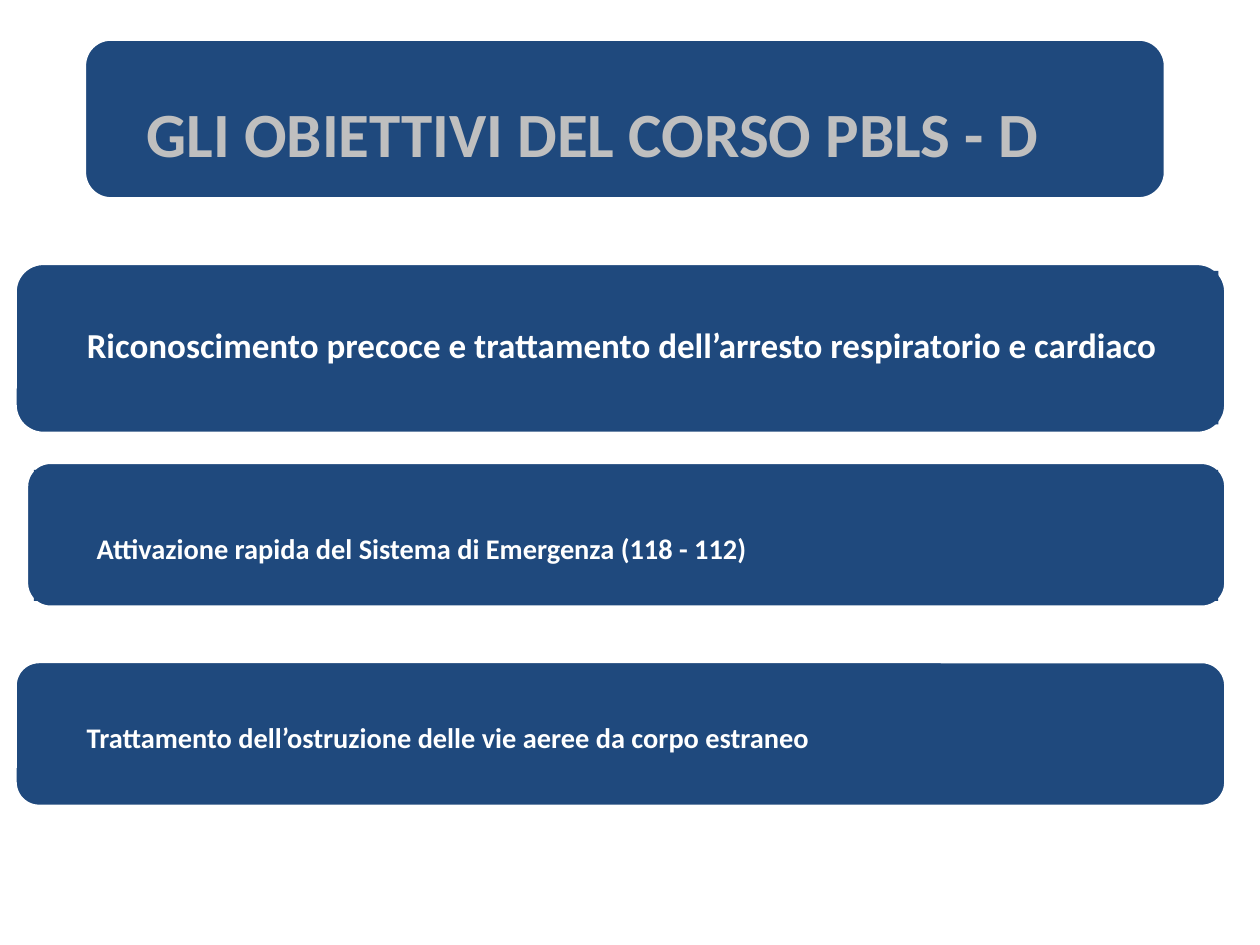
from pptx import Presentation
from pptx.dml.color import RGBColor
from pptx.enum.shapes import MSO_SHAPE
from pptx.enum.text import MSO_ANCHOR, MSO_AUTO_SIZE, PP_ALIGN
from pptx.util import Pt

COLORS = {"panel": "1F497D", "edge": "FFFFFF", "title": "BFBFBF", "goal": "FFFFFF"}

# Boxes are (left, top, width, height) in points; inner boxes are
# relative to the left and top of their panel.
TITLE_PANEL = (48.2, 22.3, 617.8, 91.4)
TITLE_BAND = (3.6, 28.8, 610.6, 29.5)
TITLE_TEXT = (-16.6, 28.1, 614.2, 51.1)

# Panel, band, text box, wording, size, raised
GOALS = [
    ((8.6, 150.5, 691.9, 97.2), (11.5, 4.3, 676.1, 87.8), (33.9, 31, 646.6, 31.7),
     "Riconoscimento precoce e trattamento dell’arresto respiratorio e cardiaco",
     20, False),
    ((15.1, 264.2, 685.4, 82.8), (4.3, 4.3, 676.8, 74.9), (33.1, 32.4, 527, 30.2),
     "Attivazione rapida del Sistema di Emergenza (118 - 112)", 28, True),
    ((8.6, 378, 691.9, 82.8), None, (33.9, 26.6, 544.3, 30.2),
     "Trattamento dell’ostruzione delle vie aeree da corpo estraneo", 28, True),
]


def color(name):
    return RGBColor.from_string(COLORS[name])


def within(panel, inner):
    left, top, width, height = inner
    return panel[0] + left, panel[1] + top, width, height


def add_block(shapes, kind, box):
    block = shapes.add_shape(kind, *map(Pt, box))
    block.shadow.inherit = False
    block.fill.solid()
    block.fill.fore_color.rgb = color("panel")
    return block


def add_panel(slide, box, band_box):
    """Rounded panel, grouped with the plain band inside it if there is one."""
    shapes = slide.shapes.add_group_shape().shapes if band_box else slide.shapes
    panel = add_block(shapes, MSO_SHAPE.ROUNDED_RECTANGLE, box)
    panel.line.color.rgb = color("edge")
    panel.line.width = Pt(2)
    if band_box:
        band = add_block(shapes, MSO_SHAPE.RECTANGLE, within(box, band_box))
        band.line.fill.background()


def write(frame, wording, size, color_name):
    frame.word_wrap = True
    frame.auto_size = MSO_AUTO_SIZE.SHAPE_TO_FIT_TEXT
    frame.vertical_anchor = MSO_ANCHOR.TOP
    paragraph = frame.paragraphs[0]
    paragraph.text = wording
    font = paragraph.font
    font.name, font.size, font.bold = "Calibri", Pt(size), True
    font.color.rgb = color(color_name)
    return paragraph


def add_heading(slide, box):
    add_panel(slide, box, TITLE_BAND)
    title = slide.shapes.title
    title.left, title.top, title.width, title.height = map(Pt, within(box, TITLE_TEXT))
    frame = title.text_frame
    frame.margin_left = frame.margin_right = Pt(3.6)
    frame.margin_top = frame.margin_bottom = Pt(3.6)
    heading = write(frame, "GLI OBIETTIVI DEL CORSO PBLS - D", 36, "title")
    heading.alignment = PP_ALIGN.CENTER
    # Bring the title in front of its panel
    slide.shapes._spTree.append(title._element)


def add_goal(slide, box, band_box, text_box, wording, size, raised):
    add_panel(slide, box, band_box)
    label = slide.shapes.add_textbox(*map(Pt, within(box, text_box)))
    goal = write(label.text_frame, wording, size, "goal")
    if raised:
        goal.runs[0]._r.get_or_add_rPr().set("baseline", "30000")


def main():
    prs = Presentation()
    prs.slide_width, prs.slide_height = Pt(720), Pt(540)
    slide = prs.slides.add_slide(prs.slide_layouts[5])
    add_heading(slide, TITLE_PANEL)
    for goal in GOALS:
        add_goal(slide, *goal)
    prs.save("out.pptx")


if __name__ == "__main__":
    main()
